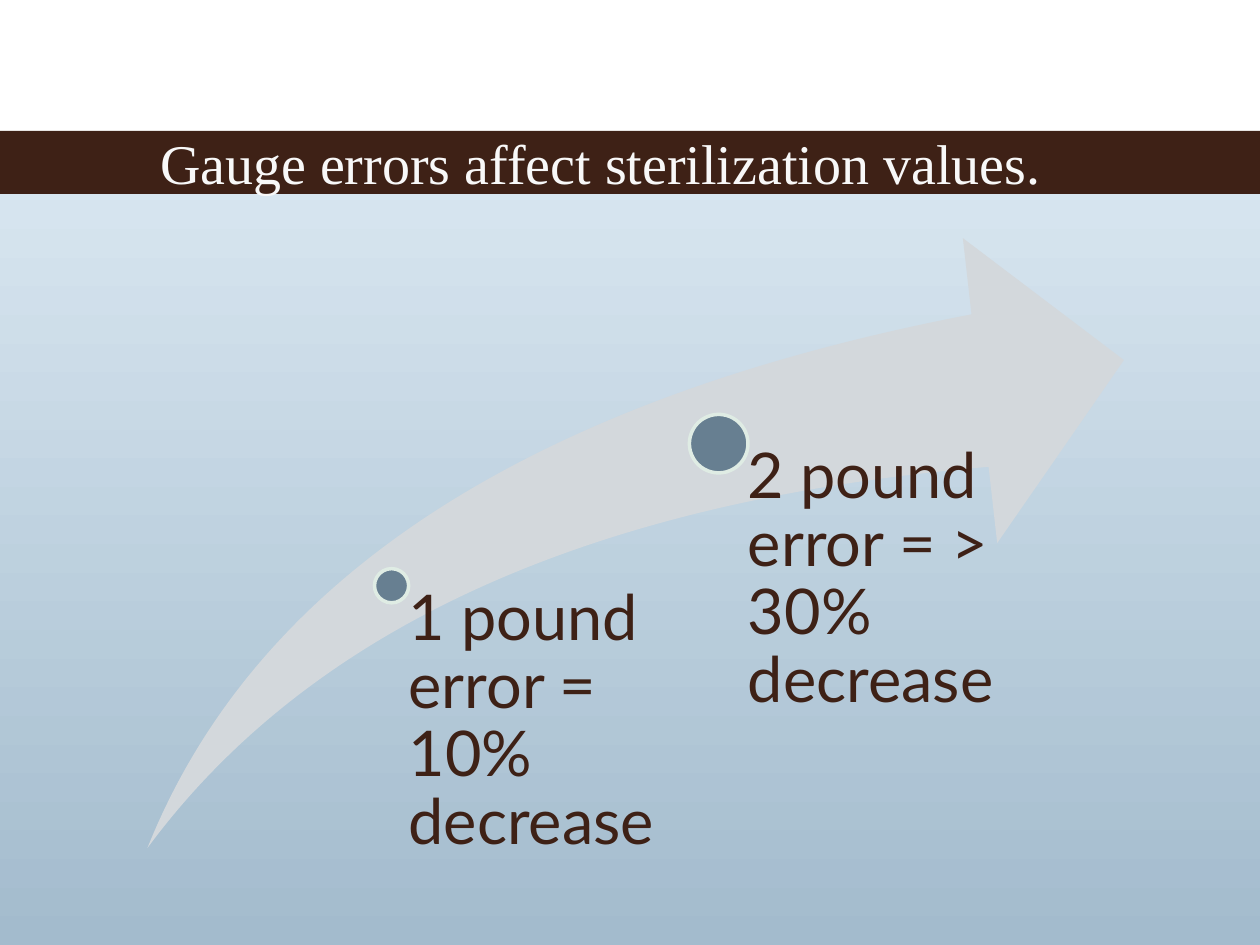
from lxml import etree
from pptx import Presentation, util as u
from pptx.dml.color import RGBColor
from pptx.enum import shapes, text

COLORS = {
    "sky_top": "E4F0F8", "sky_bottom": "A3BBCD", "header": "FFFFFF",
    "band": "3E2116", "swoosh": "D3D8DC", "dot": "677F91",
    "dot_rim": "DFECE4", "label": "3E2116", "title": "F8F8F8",
}
# Label, dot centre across and down the arrow, dot diameter (shares of the arrow box)
MILESTONES = [
    ("1 pound error = 10% decrease", 0.25, 0.57, 0.035),
    ("2 pound error = > 30% decrease", 0.585, 0.337, 0.06),
]
LABEL_WIDTH = 0.325


def color(name):
    return RGBColor.from_string(COLORS[name])


def inches(box):
    return [u.Inches(length) for length in box]


def add_filled(slide, kind, box, fill, rim=None):
    shape = slide.shapes.add_shape(kind, *inches(box))
    shape.shadow.inherit = False
    shape.fill.solid()
    shape.fill.fore_color.rgb = color(fill)
    if rim:
        shape.line.color.rgb = color(rim)
        shape.line.width = u.Pt(2)
    else:
        shape.line.fill.background()
    return shape


def style_text(frame, font_name, size, font_color):
    font = frame.paragraphs[0].runs[0].font
    font.name = font_name
    font.size = u.Pt(size)
    font.color.rgb = color(font_color)


def paint_background(slide):
    fill = slide.background.fill
    fill.gradient()
    fill.gradient_angle = 270
    for stop, name, position in zip(fill.gradient_stops, ("sky_top", "sky_bottom"), (0, 1)):
        stop.color.rgb = color(name)
        stop.position = position


def add_header(slide, box):
    left, top, width, height = box
    band_top = top + 0.675 * height
    rectangle = shapes.MSO_SHAPE.RECTANGLE
    add_filled(slide, rectangle, (left, top, width, 0.7 * height), "header")
    add_filled(slide, rectangle, (left, band_top, width, top + height - band_top), "band")

    title = slide.shapes.title
    title.left, title.top, title.width, title.height = inches(
        (left + 0.117 * width, top + 0.63 * height, 0.825 * width, 0.415 * height))
    frame = title.text_frame
    frame.text = "Gauge errors affect sterilization values."
    frame.auto_size = text.MSO_AUTO_SIZE.NONE
    frame.vertical_anchor = text.MSO_ANCHOR.MIDDLE
    frame.paragraphs[0].alignment = text.PP_ALIGN.LEFT
    style_text(frame, "Times New Roman", 32, "title")
    slide.shapes._spTree.append(title._element)  # bring in front of the band


def add_milestone(slide, box, label, across, down, diameter):
    """Place a dot on the arrow and hang its label from the dot's centre."""
    left, top, width, height = box
    x, y = left + across * width, top + down * height
    size = diameter * width
    add_filled(slide, shapes.MSO_SHAPE.OVAL,
               (x - size / 2, y - size / 2, size, size), "dot", "dot_rim")

    caption = slide.shapes.add_textbox(
        *inches((x, y, LABEL_WIDTH * width, top + height - y)))
    frame = caption.text_frame
    frame.word_wrap = True
    frame.margin_left = u.Inches(size / 2)
    frame.margin_top = frame.margin_right = frame.margin_bottom = 0
    frame.text = label
    frame.paragraphs[0].line_spacing = 0.9
    style_text(frame, "Lato", 36, "label")


def add_rising_arrow(slide, box):
    swoosh = add_filled(slide, shapes.MSO_SHAPE.SWOOSH_ARROW, box, "swoosh")
    swoosh.adjustments[0] = swoosh.adjustments[1] = 0.25
    for milestone in MILESTONES:
        add_milestone(slide, box, *milestone)


def main():
    deck = Presentation()
    deck.slide_width, deck.slide_height = inches((10, 7.5))
    slide = deck.slides.add_slide(deck.slide_layouts[5])
    paint_background(slide)
    add_rising_arrow(slide, (1.17, 1.89, 7.75, 4.84))
    add_header(slide, (0, 0, 10, 1.54))
    deck.save("out.pptx")


if __name__ == "__main__":
    main()
